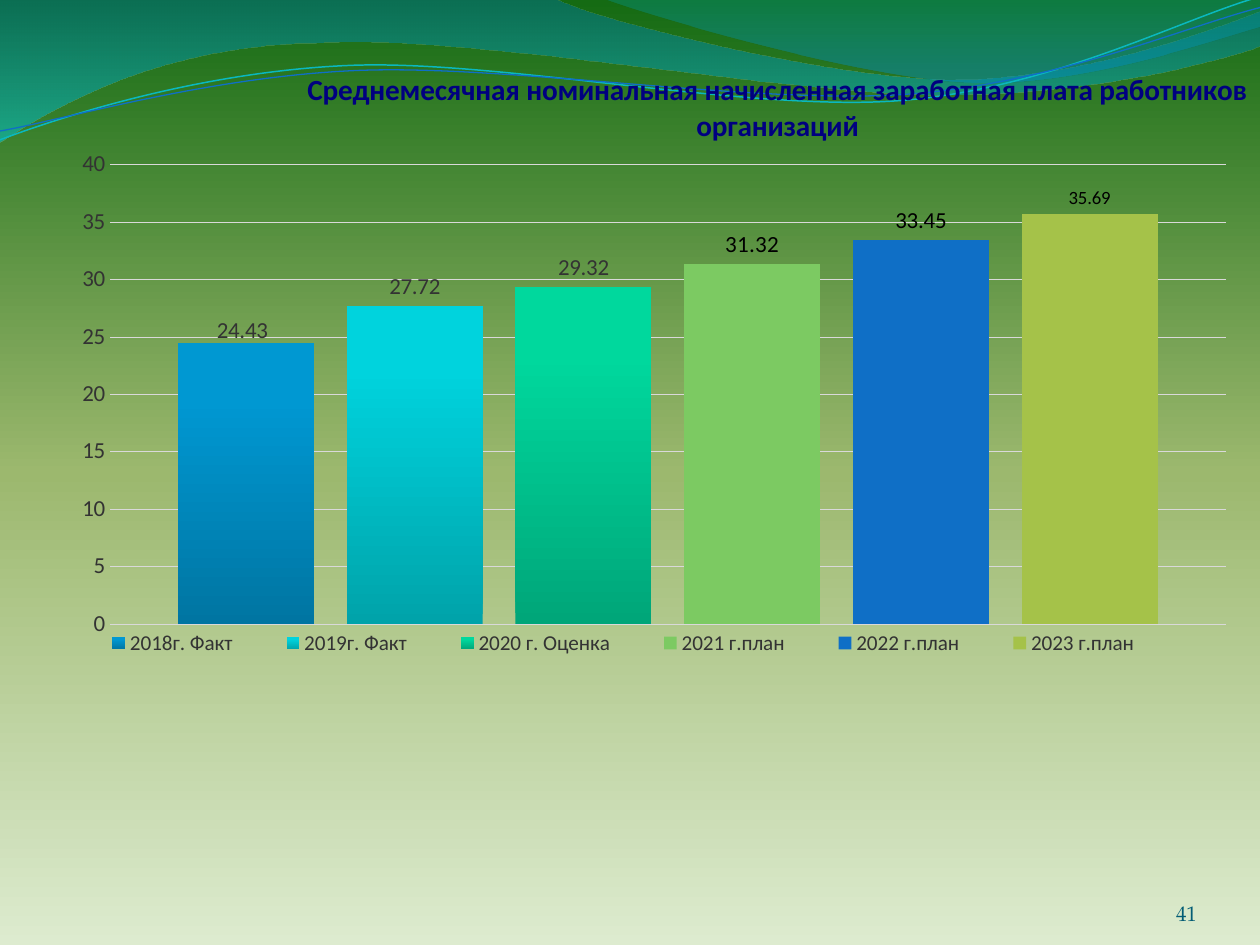
"""Build a slide with a wage column chart under a wavy header."""
from lxml import etree
from pptx import Presentation, util as u
from pptx.chart.data import CategoryChartData
from pptx.dml.color import RGBColor
from pptx.enum import chart as ch, text
from pptx.oxml.ns import qn

W, H = 10, 7.5
NAVY, GREY, BLACK = RGBColor(0, 0, 0x80), RGBColor(0x33, 0x33, 0x33), RGBColor(0, 0, 0)
GRID, TEAL = RGBColor(0xD9, 0xD9, 0xD9), RGBColor(0x04, 0x5D, 0x75)
CYAN, BLUE = RGBColor(0x0A, 0xB8, 0xBF), RGBColor(0x0F, 0x6F, 0xC6)
GREEN, OLIVE = RGBColor(0x7C, 0xCA, 0x62), RGBColor(0xA5, 0xC2, 0x49)
FONT, NUMBER_FONT = "Calibri", "TeX Gyre Pagella"

TITLE = "Среднемесячная номинальная начисленная заработная плата работников организаций"
PAGE = "41"
BACKGROUND = [(0, "DDEBCF", 100), (50, "9CB86E", 100), (100, "156B13", 100)]
SERIES = [
    ("2018г. Факт", 24.43, [(0, "0075A2", 100), (80, "0098D2", 100), (100, "0099D3", 100)], 13.1, GREY),
    ("2019г. Факт", 27.72, [(0, "00A3AA", 100), (80, "00D3DD", 100), (100, "00D4DE", 100)], 13.1, GREY),
    ("2020 г. Оценка", 29.32, [(0, "00A679", 100), (80, "00D89D", 100), (100, "00D99E", 100)], 13.1, GREY),
    ("2021 г.план", 31.32, GREEN, 13.2, BLACK),
    ("2022 г.план", 33.45, BLUE, 13.1, BLACK),
    ("2023 г.план", 35.69, OLIVE, 10.7, BLACK),
]
WAVES = [
    ([(0, -0.01), (4.4, -0.01), (4.76, 0.17, 6.64, 0.63, 7.58, 0.63),
      (8.53, 0.63, 9.58, 0.26, 10, 0.09), (10.01, 0.36),
      (9.83, 0.44, 8.7, 0.76, 7.46, 0.75), (6.22, 0.75, 3.82, 0.28, 2.57, 0.34),
      (1.29, 0.35, 0.46, 0.83, -0.01, 1.13), (0, -0.01)],
     [(0, "0074A1", 45), (100, "00C6CF", 55)]),
    ([(4.79, -0.01), (5.09, 0.11, 6.82, 0.62, 7.69, 0.65),
      (8.56, 0.69, 9.61, 0.32, 10, 0.21), (10, 0), (4.79, -0.01)],
     [(0, "00A1A9", 30), (80, "008BBF", 45)]),
]
STRANDS = [
    ([(0, 1.11), (0.48, 0.93, 1.58, 0.57, 2.77, 0.52), (3.95, 0.47, 5.93, 0.89, 7.13, 0.8),
      (8.33, 0.71, 9.38, 0.15, 9.98, -0.02)], CYAN, 0.85),
    ([(0, 1.04), (0.47, 0.96, 1.64, 0.61, 2.83, 0.56), (4.03, 0.51, 5.97, 0.83, 7.17, 0.75),
      (8.36, 0.67, 9.41, 0.21, 10, 0.06)], BLUE, 0.75),
]


def gradient(fill, element, stops, angle):
    fill.gradient()
    grad = next(element.iter(qn("a:gradFill")))
    gs_list = grad.find(qn("a:gsLst"))
    for old in list(gs_list):
        gs_list.remove(old)
    for pos, color, opacity in stops:
        gs = etree.SubElement(gs_list, qn("a:gs"), pos=str(pos * 1000))
        clr = etree.SubElement(gs, qn("a:srgbClr"), val=color)
        if opacity < 100:
            etree.SubElement(clr, qn("a:alpha"), val=str(opacity * 1000))
    grad.find(qn("a:lin")).set("ang", str(angle * 60000))


def curve(s, steps, closed):
    ends = [(u.Inches(step[-2]), u.Inches(step[-1])) for step in steps]
    builder = s.shapes.build_freeform(*ends[0])
    builder.add_line_segments(ends[1:], close=closed)
    sp = builder.convert_to_shape()
    sp.shadow.inherit = False
    for line, step in zip(list(sp._element.iter(qn("a:lnTo"))), steps[1:]):
        if len(step) == 6:
            bezier = etree.Element(qn("a:cubicBezTo"))
            for x, y in zip(step[::2], step[1::2]):
                etree.SubElement(bezier, qn("a:pt"), x=str(u.Inches(x) - sp.left),
                                 y=str(u.Inches(y) - sp.top))
            line.getparent().replace(line, bezier)
    return sp


def place(element, index, mode="edge", **shares):
    for old in element.findall(qn("c:layout")):
        element.remove(old)
    layout = etree.Element(qn("c:layout"))
    element.insert(index, layout)
    manual = etree.SubElement(layout, qn("c:manualLayout"))
    if index == 0:
        etree.SubElement(manual, qn("c:layoutTarget"), val="inner")
    for key in ("x", "y"):
        etree.SubElement(manual, qn(f"c:{key}Mode"), val=mode)
    for key, share in shares.items():
        etree.SubElement(manual, qn(f"c:{key}"), val=str(share))


def style(font, size, color, name=FONT):
    font.size, font.name, font.color.rgb = u.Pt(size), name, color


def add_wage_chart(s):
    data = CategoryChartData()
    data.categories = ["1"]
    for name, value, *_ in SERIES:
        data.add_series(name, [value])
    chart = s.shapes.add_chart(ch.XL_CHART_TYPE.COLUMN_CLUSTERED, u.Inches(0.4), u.Inches(0.39),
                               u.Inches(9.84), u.Inches(5.53), data).chart
    style(chart.font, 10.7, BLACK)

    tf = chart.chart_title.text_frame
    tf.text = TITLE
    style(tf.paragraphs[0].font, 16.7, NAVY)
    tf.paragraphs[0].font.bold = True
    place(chart.chart_title._element, 1, x=0.203, y=0.022)

    chart.has_legend = True
    legend = chart.legend
    legend.position = ch.XL_LEGEND_POSITION.BOTTOM
    legend.include_in_layout = False
    style(legend.font, 12.1, GREY)
    place(legend._element, 1, x=0.012, y=0.83, w=0.9, h=0.045)

    chart.category_axis.visible = False
    axis = chart.value_axis
    axis.minimum_scale, axis.maximum_scale, axis.major_unit = 0, 40, 5
    axis.major_tick_mark = ch.XL_TICK_MARK.NONE
    axis.format.line.fill.background()
    axis.major_gridlines.format.line.color.rgb = GRID
    axis.major_gridlines.format.line.width = u.Pt(0.27)
    style(axis.tick_labels.font, 13.1, GREY)

    plot = chart.plots[0]
    plot.gap_width, plot.overlap, plot.vary_by_categories = 100, -24, False
    place(chart._chartSpace.chart.plotArea, 0, x=0.048, y=0.166, w=0.9, h=0.659)
    for series, (_, _, paint, size, color) in zip(plot.series, SERIES):
        fill = series.format.fill
        if isinstance(paint, list):
            gradient(fill, series._element, paint, 270)
        else:
            fill.solid()
            fill.fore_color.rgb = paint
        labels = series.data_labels
        labels.show_value = True
        labels.position = ch.XL_LABEL_POSITION.OUTSIDE_END
        style(labels.font, size, color)

    first = plot.series[0]
    label = first.points[0].data_label
    style(label.font, 13.1, GREY)
    label.position = ch.XL_LABEL_POSITION.OUTSIDE_END
    place(next(first._element.iter(qn("c:dLbl"))), 1, "factor", x=-0.003, y=0.01)


def add_page_number(s):
    tf = s.shapes.add_textbox(u.Inches(8.67), u.Inches(6.95), u.Inches(0.83), u.Inches(0.4)).text_frame
    tf.word_wrap = True
    tf.vertical_anchor = text.MSO_ANCHOR.BOTTOM
    tf.margin_left = tf.margin_right = tf.margin_top = tf.margin_bottom = 0
    p = tf.paragraphs[0]
    p.text = PAGE
    p.alignment = text.PP_ALIGN.RIGHT
    style(p.font, 12, TEAL, NUMBER_FONT)


def main():
    prs = Presentation()
    prs.slide_width, prs.slide_height = u.Inches(W), u.Inches(H)
    s = prs.slides.add_slide(prs.slide_layouts[6])
    gradient(s.background.fill, s._element, BACKGROUND, 270)
    for steps, stops in WAVES:
        sp = curve(s, steps, True)
        gradient(sp.fill, sp._element, stops, 90)
        sp.line.fill.background()
    for steps, color, width in STRANDS:
        sp = curve(s, steps, False)
        sp.fill.background()
        sp.line.color.rgb, sp.line.width = color, u.Pt(width)
    add_wage_chart(s)
    add_page_number(s)
    prs.save("out.pptx")


if __name__ == "__main__":
    main()
